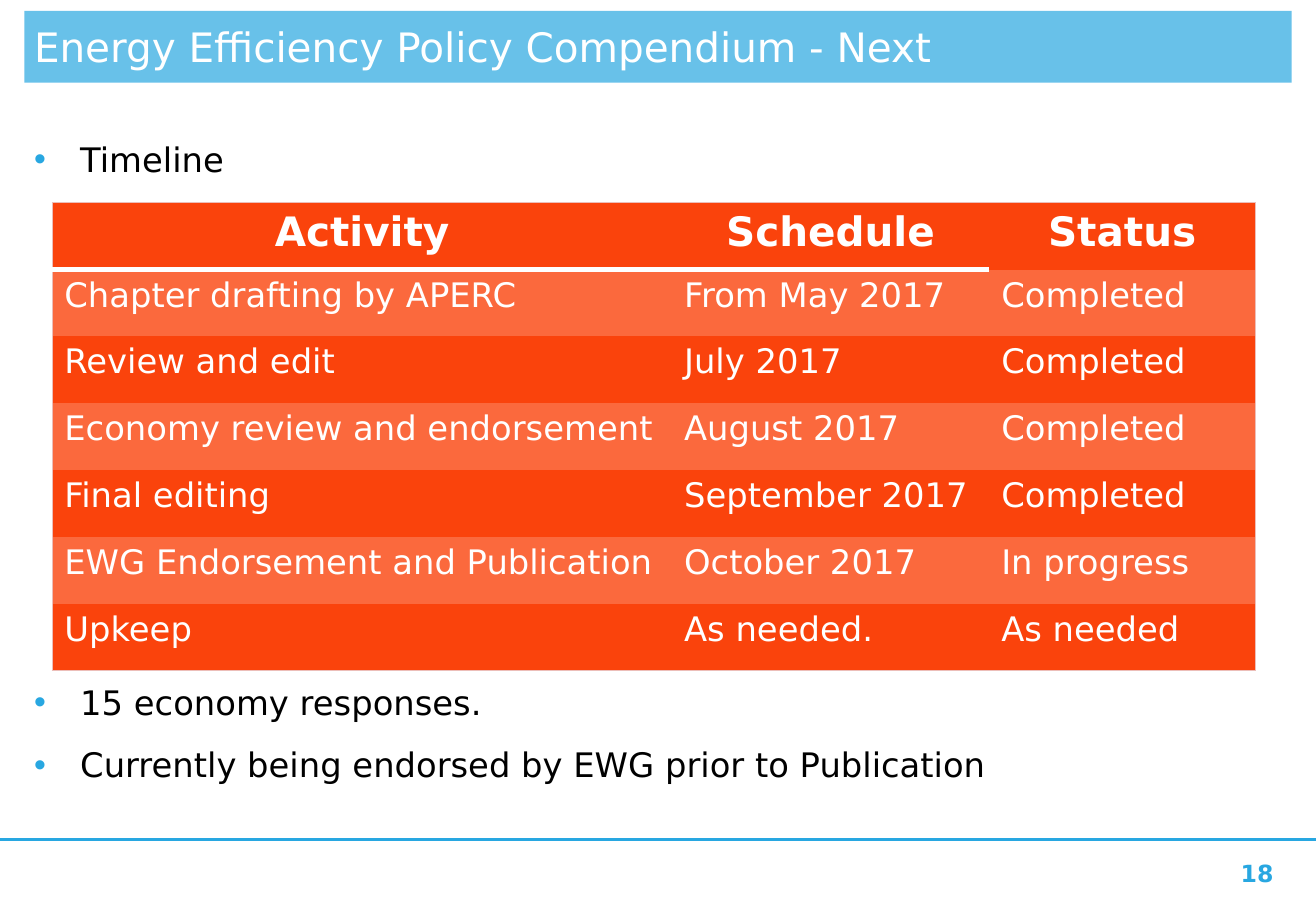
import pptx
import pptx.util
import pptx.dml.color
import pptx.enum.shapes
import pptx.enum.text
import pptx.oxml
import pptx.oxml.ns
from lxml import etree

Inches, Pt = pptx.util.Inches, pptx.util.Pt
RGBColor = pptx.dml.color.RGBColor
Align, Anchor = pptx.enum.text.PP_ALIGN, pptx.enum.text.MSO_ANCHOR
qn = pptx.oxml.ns.qn

HEADING = "Energy Efficiency Policy Compendium - Next"
POINTS = [
    ("Timeline", 0),
    ("15 economy responses.", 292),
    ("Currently being endorsed by EWG prior to Publication", 7),
]
TIMELINE = [
    ("Activity", "Schedule", "Status"),
    ("Chapter drafting by APERC", "From May 2017", "Completed"),
    ("Review and edit", "July 2017", "Completed"),
    ("Economy review and endorsement", "August 2017", "Completed"),
    ("Final editing", "September 2017", "Completed"),
    ("EWG Endorsement and Publication", "October 2017", "In progress"),
    ("Upkeep", "As needed.", "As needed"),
]
PAGE = "18"

BLUE = RGBColor(0x28, 0xA7, 0xE1)
WHITE = RGBColor(0xFF, 0xFF, 0xFF)
BLACK = RGBColor(0, 0, 0)
ORANGE = RGBColor(0xFA, 0x43, 0x0C)
LIGHT_ORANGE = RGBColor(0xFB, 0x69, 0x3D)
EDGE = RGBColor(0xEC, 0xBE, 0xB9)

FONT = "DejaVu Sans"
NO_STYLE = "{2D5ABB26-0587-4C30-8999-92F81FD0307C}"
WIDTH, HEIGHT = 10.83, 7.5
COLUMNS = [5.1, 2.61, 2.19]
ROW_HEIGHT = 0.55
INDENT = 0.38


def apply(target, values):
    for name, value in values.items():
        setattr(target, name, value)


def write(paragraph, text, size, color, bold=False, align=Align.LEFT):
    paragraph.alignment = align
    run = paragraph.add_run()
    run.text = text
    apply(run.font, {"name": FONT, "size": Pt(size), "bold": bold})
    run.font.color.rgb = color


def place(shape, box, insets, anchor):
    apply(shape, dict(zip(("left", "top", "width", "height"), map(Inches, box))))
    sides = ("margin_left", "margin_top", "margin_right", "margin_bottom")
    apply(shape.text_frame, dict(zip(sides, map(Inches, insets))))
    apply(shape.text_frame, {
        "word_wrap": True,
        "auto_size": pptx.enum.text.MSO_AUTO_SIZE.NONE,
        "vertical_anchor": anchor,
    })


def add_bullet(paragraph):
    properties = paragraph._p.get_or_add_pPr()
    apply_indent = {"marL": Inches(INDENT), "indent": Inches(-INDENT)}
    for name, value in apply_indent.items():
        properties.set(name, str(value))
    color = etree.SubElement(properties, qn("a:buClr"))
    etree.SubElement(color, qn("a:srgbClr"), val=str(BLUE))
    etree.SubElement(properties, qn("a:buFont"), typeface="Arial")
    etree.SubElement(properties, qn("a:buChar"), char="•")


def add_border(cell, side, color, width):
    line = etree.SubElement(cell._tc.get_or_add_tcPr(), qn("a:ln" + side), w=str(Pt(width)))
    fill = etree.SubElement(line, qn("a:solidFill"))
    etree.SubElement(fill, qn("a:srgbClr"), val=str(color))


def add_title(slide):
    title = slide.shapes.title
    place(title, (0.2, 0.09, 10.43, 0.59), (0.08, 0, 0.08, 0), Anchor.MIDDLE)
    title.fill.solid()
    title.fill.fore_color.rgb = BLUE
    tint = title._element.spPr.find(".//" + qn("a:srgbClr"))
    etree.SubElement(tint, qn("a:alpha"), val="70000")
    write(title.text_frame.paragraphs[0], HEADING, 24, WHITE)


def add_points(slide):
    body = slide.placeholders[1]
    place(body, (0.2, 1.14, 10.43, 5.6), (0.08, 0, 0.16, 0.08), Anchor.TOP)
    for index, (text, gap) in enumerate(POINTS):
        frame = body.text_frame
        paragraph = frame.add_paragraph() if index else frame.paragraphs[0]
        add_bullet(paragraph)
        apply(paragraph, {"space_before": Pt(gap), "space_after": Pt(6)})
        write(paragraph, text, 20, BLACK)


def add_timeline(slide):
    last_row, last_column = len(TIMELINE) - 1, len(COLUMNS) - 1
    table = slide.shapes.add_table(
        len(TIMELINE), len(COLUMNS), Inches(0.43), Inches(1.67),
        Inches(sum(COLUMNS)), Inches(ROW_HEIGHT * len(TIMELINE))).table
    apply(table, {"first_row": False, "horz_banding": False})
    table._tbl.tblPr.find(qn("a:tableStyleId")).text = NO_STYLE
    for column, width in zip(table.columns, COLUMNS):
        column.width = Inches(width)
    for r, entries in enumerate(TIMELINE):
        table.rows[r].height = Inches(ROW_HEIGHT)
        header = r == 0
        for c, text in enumerate(entries):
            cell = table.cell(r, c)
            outer = {"L": c == 0, "R": c == last_column, "T": header, "B": r == last_row}
            for side, on_edge in outer.items():
                if on_edge:
                    add_border(cell, side, EDGE, 0.75)
            if header and c < last_column:
                add_border(cell, "B", WHITE, 3)
            cell.fill.solid()
            cell.fill.fore_color.rgb = LIGHT_ORANGE if r % 2 else ORANGE
            write(cell.text_frame.paragraphs[0], text, 24 if header else 20, WHITE,
                  header, Align.CENTER if header else Align.LEFT)


def add_footer(slide):
    rule = slide.shapes.add_connector(
        pptx.enum.shapes.MSO_CONNECTOR.STRAIGHT,
        0, Inches(6.91), Inches(WIDTH), Inches(6.91))
    rule.line.color.rgb = BLUE
    rule.line.width = Pt(1.5)
    etree.SubElement(rule._element.spPr, qn("a:effectLst"))
    box = (10.09, 7.09, 0.51, 0.2)
    page = slide.shapes.add_shape(
        pptx.enum.shapes.MSO_SHAPE.ROUNDED_RECTANGLE, *map(Inches, box))
    page.shadow.inherit = False
    page.fill.background()
    page.line.fill.background()
    place(page, box, (0.04,) * 4, Anchor.MIDDLE)
    write(page.text_frame.paragraphs[0], PAGE, 14, BLUE, True, Align.CENTER)


def main():
    deck = pptx.Presentation()
    apply(deck, {"slide_width": Inches(WIDTH), "slide_height": Inches(HEIGHT)})
    slide = deck.slides.add_slide(deck.slide_layouts[1])
    add_title(slide)
    add_points(slide)
    add_timeline(slide)
    add_footer(slide)
    deck.save("out.pptx")


if __name__ == "__main__":
    main()
